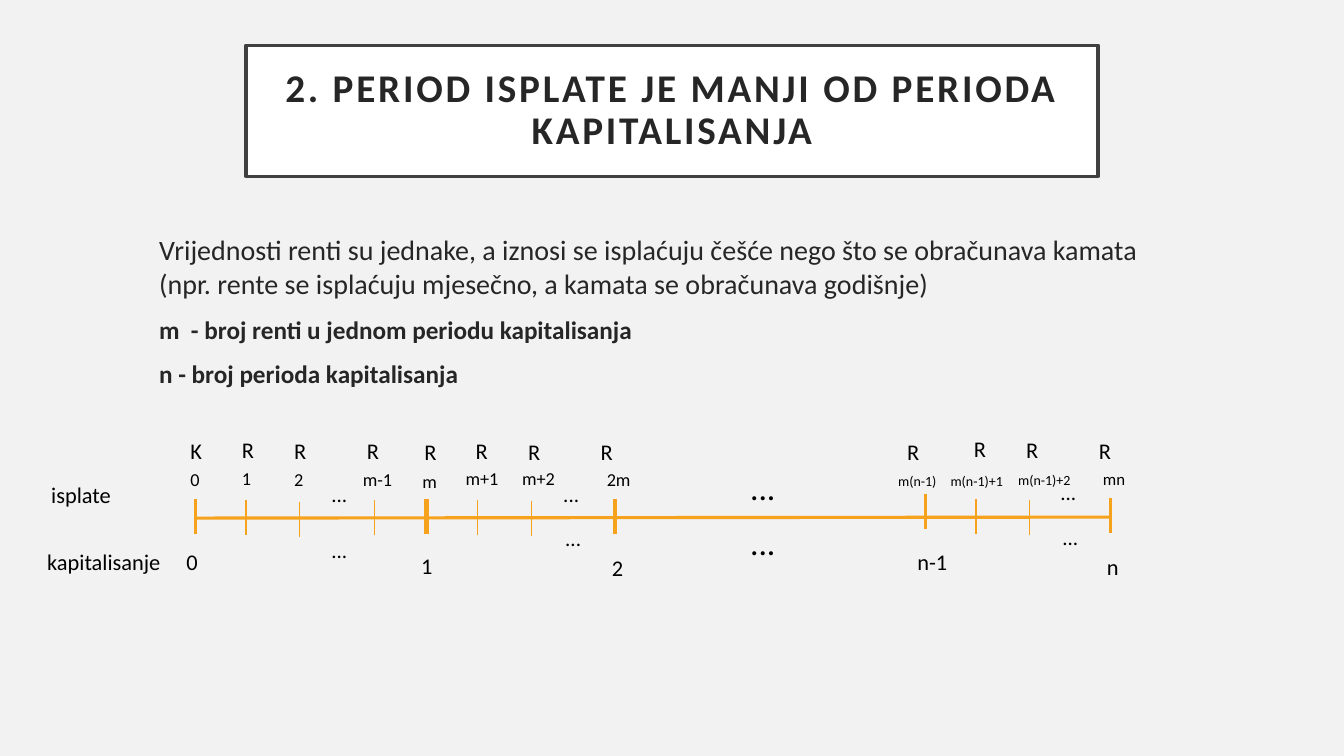
from dataclasses import dataclass

from lxml import etree
from pptx import Presentation
from pptx.dml.color import RGBColor
from pptx.enum.shapes import MSO_CONNECTOR
from pptx.enum.text import MSO_ANCHOR, MSO_AUTO_SIZE, PP_ALIGN
from pptx.oxml.ns import qn
from pptx.util import Inches, Pt

STRAIGHT = MSO_CONNECTOR.STRAIGHT
MIDDLE, TOP = MSO_ANCHOR.MIDDLE, MSO_ANCHOR.TOP
LEFT, CENTER = PP_ALIGN.LEFT, PP_ALIGN.CENTER
NO_FIT = MSO_AUTO_SIZE.NONE


@dataclass(frozen=True)
class Theme:
    font: str = "Calibri"
    backdrop: str = "F2F2F2"
    panel: str = "FFFFFF"
    border: str = "404040"
    ink: str = "262626"
    label: str = "000000"
    axis: str = "F6A21D"
    title_size: float = 28
    lead_size: float = 20
    note_size: float = 18
    label_size: float = 16
    dots_size: float = 15
    big_dots_size: float = 24
    index_size: float = 13
    end_index_size: float = 12
    small_index_size: float = 10
    thick: float = 2.25
    thin: float = 0.75


def color(value):
    return RGBColor.from_string(value)


def assign(target, values):
    for name, value in values.items():
        setattr(target, name, value)


class SlideBuilder:
    """Builds the elements of one slide in one theme."""

    def __init__(self, page, theme):
        self.page = page
        self.theme = theme
        fill = page.background.fill
        fill.solid()
        fill.fore_color.rgb = color(theme.backdrop)

    def add_span(self, para, text, size, ink, bold=False):
        span = para.add_run()
        span.text = text
        assign(span.font, {"name": self.theme.font, "size": Pt(size), "bold": bold})
        span.font.color.rgb = color(ink)
        return span

    def title(self, text, left, top, width, height):
        box = self.page.shapes.title
        assign(box, {"left": Inches(left), "top": Inches(top),
                     "width": Inches(width), "height": Inches(height)})
        box.fill.solid()
        box.fill.fore_color.rgb = color(self.theme.panel)
        box.line.color.rgb = color(self.theme.border)
        box.line.width = Pt(2.5)
        frame = box.text_frame
        margins = {f"margin_{side}": Inches(0.2) for side in ("left", "top", "right", "bottom")}
        assign(frame, {"word_wrap": True, "auto_size": NO_FIT, "vertical_anchor": MIDDLE, **margins})
        para = frame.paragraphs[0]
        assign(para, {"alignment": CENTER, "line_spacing": 0.9})
        span = self.add_span(para, text, self.theme.title_size, self.theme.ink, True)
        span._r.get_or_add_rPr().set("spc", "200")

    def text_box(self, left, top, width, height):
        box = self.page.shapes.add_textbox(Inches(left), Inches(top), Inches(width), Inches(height))
        assign(box.text_frame, {"word_wrap": True, "auto_size": NO_FIT, "vertical_anchor": TOP})
        return box.text_frame

    def body(self, paragraphs, left, top, width, height):
        frame = self.text_box(left, top, width, height)
        for number, (text, size, bold) in enumerate(paragraphs):
            para = frame.add_paragraph() if number else frame.paragraphs[0]
            para.space_before = Pt(10)
            self.add_span(para, text, size, self.theme.ink, bold)

    def label(self, text, left, top, size, width=0.9, alignment=LEFT):
        frame = self.text_box(left, top, width, size / 60 + 0.1)
        para = frame.paragraphs[0]
        para.alignment = alignment
        self.add_span(para, text, size, self.theme.label)

    def dots(self, left, top, size):
        self.label("...", left, top, size, 1.15, CENTER)

    def line(self, x1, y1, x2, y2, width):
        line = self.page.shapes.add_connector(STRAIGHT, Inches(x1), Inches(y1), Inches(x2), Inches(y2))
        line.line.color.rgb = color(self.theme.axis)
        line.line.width = Pt(width)
        etree.SubElement(line._element.spPr, qn("a:effectLst"))

    def tick(self, x, top, width):
        self.line(x, top, x, top + 0.35, width)


def main():
    theme = Theme()
    deck = Presentation()
    assign(deck, {"slide_width": Inches(13.33), "slide_height": Inches(7.5)})
    slide = SlideBuilder(deck.slides.add_slide(deck.slide_layouts[5]), theme)

    slide.title("2. PERIOD ISPLATE JE MANJI OD PERIODA KAPITALISANJA", 2.44, 0.45, 8.45, 1.3)
    slide.body([
        ("Vrijednosti renti su jednake, a iznosi se isplaćuju češće nego što se obračunava kamata "
         "(npr. rente se isplaćuju mjesečno, a kamata se obračunava godišnje)", theme.lead_size, False),
        ("m  - broj renti u jednom periodu kapitalisanja", theme.note_size, True),
        ("n - broj perioda kapitalisanja", theme.note_size, True),
    ], 1.48, 2.26, 10.37, 4.89)

    slide.line(1.94, 5.14, 11.01, 5.13, theme.thick)
    for x, top in ((1.94, 4.95), (4.22, 4.95), (4.24, 4.95), (6.1, 4.95), (9.18, 4.9), (11.01, 4.94)):
        slide.tick(x, top, theme.thick)
    for x, top in ((2.44, 4.96), (2.97, 4.98), (3.71, 4.96), (4.74, 4.96),
                   (5.27, 4.97), (9.68, 4.95), (10.21, 4.96)):
        slide.tick(x, top, theme.thin)

    slide.label("isplate", 0.41, 4.72, theme.label_size, 1.52)
    slide.label("kapitalisanje", 0.37, 5.39, theme.label_size, 1.52)
    slide.label("K", 1.79, 4.29, theme.label_size)
    for left, top in ((2.3, 4.28), (2.82, 4.29), (3.54, 4.29), (4.11, 4.3), (4.62, 4.29), (5.14, 4.3),
                      (5.86, 4.3), (8.9, 4.3), (9.56, 4.27), (10.08, 4.28), (10.8, 4.29)):
        slide.label("R", left, top, theme.label_size)

    for text, left, top in (("0", 1.79, 4.6), ("1", 2.3, 4.59), ("2", 2.82, 4.6), ("m-1", 3.5, 4.6),
                            ("m", 4.09, 4.62), ("m+1", 4.52, 4.59), ("m+2", 5.08, 4.59), ("2m", 5.92, 4.6)):
        slide.label(text, left, top, theme.index_size)
    for text, left, top in (("m(n-1)", 8.81, 4.64), ("m(n-1)+1", 9.33, 4.64), ("m(n-1)+2", 10, 4.63)):
        slide.label(text, left, top, theme.small_index_size)
    slide.label("mn", 10.84, 4.6, theme.end_index_size)

    for text, left, top in (("0", 1.75, 5.39), ("1", 4.08, 5.43), ("2", 5.97, 5.45),
                            ("n-1", 9, 5.39), ("n", 10.88, 5.44)):
        slide.label(text, left, top, theme.label_size)

    for left, top in ((2.79, 4.73), (2.79, 5.28), (5.09, 4.73), (5.11, 5.16), (10.02, 4.71), (10.04, 5.15)):
        slide.dots(left, top, theme.dots_size)
    for top in (4.58, 5.13):
        slide.dots(6.99, top, theme.big_dots_size)

    deck.save("out.pptx")


if __name__ == "__main__":
    main()
